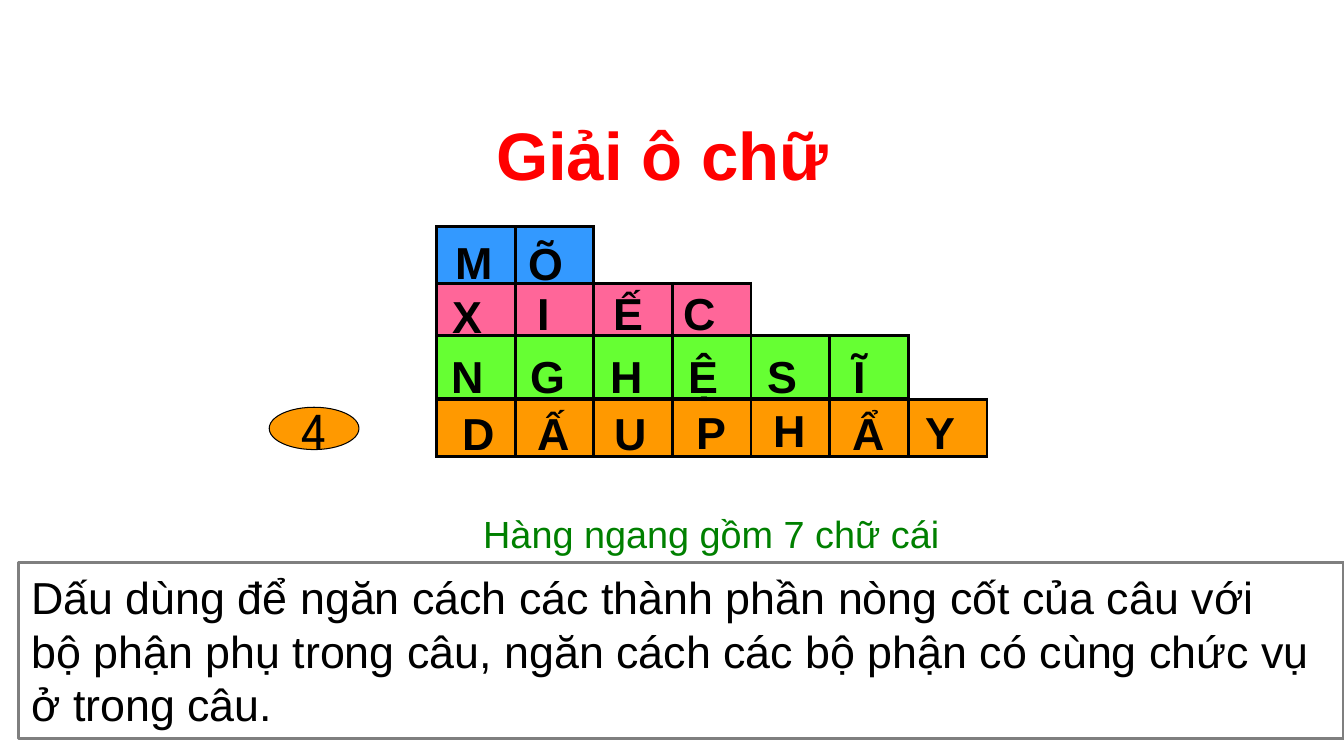
from dataclasses import dataclass

from lxml import etree
from pptx import Presentation
from pptx.dml.color import RGBColor
from pptx.enum.shapes import MSO_SHAPE
from pptx.enum.text import MSO_ANCHOR, PP_ALIGN
from pptx.oxml.ns import qn
from pptx.util import Inches, Pt

LEFT, CENTER = PP_ALIGN.LEFT, PP_ALIGN.CENTER
TOP, MIDDLE = MSO_ANCHOR.TOP, MSO_ANCHOR.MIDDLE
OVAL, RECTANGLE = MSO_SHAPE.OVAL, MSO_SHAPE.RECTANGLE


@dataclass(frozen=True)
class Theme:
    font: str = "Arial"
    badge_font: str = "League Spartan"
    black: str = "000000"
    red: str = "FF0000"
    yellow: str = "FFFF00"
    green: str = "008000"
    gray: str = "7F7F7F"
    orange: str = "FF9900"
    title_size: int = 48
    badge_size: int = 37
    body_size: int = 32
    hint_size: int = 27
    border: float = 2.25
    thin: float = 0.75


THEME = Theme()
GRID_LEFT = 4.33
CELL_WIDTH = 0.78
LETTER_WIDTH, LETTER_HEIGHT = 0.65, 0.67

# Each crossword row: top, height, fill, letters as (text, left, top, alignment)
ROWS = [
    (2.25, 0.57, "3399FF", [("M", 4.39, 2.26, LEFT), ("Õ", 5.09, 2.27, CENTER)]),
    (2.81, 0.57, "FF6699", [("X", 4.31, 2.79, CENTER), ("I", 5.07, 2.76, CENTER),
                            ("Ế", 5.91, 2.76, CENTER), ("C", 6.61, 2.76, CENTER)]),
    (3.33, 0.62, "66FF33", [("N", 4.31, 3.39, CENTER), ("G", 5.11, 3.39, CENTER),
                            ("H", 5.89, 3.39, CENTER), ("Ệ", 6.65, 3.39, CENTER),
                            ("S", 7.44, 3.39, CENTER), ("Ĩ", 8.2, 3.39, CENTER)]),
    (3.96, 0.57, THEME.orange, [("D", 4.46, 3.96, LEFT), ("Ấ", 5.2, 3.96, LEFT),
                                ("U", 5.93, 3.96, CENTER), ("P", 6.78, 3.95, LEFT),
                                ("H", 7.54, 3.93, LEFT), ("Ẩ", 8.33, 3.96, LEFT),
                                ("Y", 9, 3.95, CENTER)]),
]


def color(value):
    return RGBColor.from_string(value)


def add_line(parent, tag, value, width):
    """Build a solid line element under parent."""
    line = etree.SubElement(parent, qn(tag), w=str(Pt(width)))
    fill = etree.SubElement(line, qn("a:solidFill"))
    etree.SubElement(fill, qn("a:srgbClr"), val=value)
    return line


def write(shape, lines, size, value, align=LEFT, bold=False, font=THEME.font,
          wrap=True, anchor=TOP):
    """Fill a shape with one paragraph and return its spans."""
    frame = shape.text_frame
    frame.word_wrap = wrap
    frame.vertical_anchor = anchor
    frame.margin_left = frame.margin_right = Inches(0.13)
    frame.margin_top = frame.margin_bottom = Inches(0.07)
    para = frame.paragraphs[0]
    para.alignment = align
    spans = []
    for index, line in enumerate(lines):
        if index:
            para.add_line_break()
        span = para.add_run()
        span.text = line
        span.font.name = font
        span.font.size = Pt(size)
        span.font.bold = bold
        span.font.color.rgb = color(value)
        spans.append(span)
    return spans


def add_text(page, at, text, size, value, **style):
    box = page.shapes.add_textbox(*map(Inches, at))
    return write(box, [text], size, value, **style)[0]


def add_panel(page, kind, at, line, width, fill=None):
    panel = page.shapes.add_shape(kind, *map(Inches, at))
    panel.shadow.inherit = False
    if fill:
        panel.fill.solid()
        panel.fill.fore_color.rgb = color(fill)
    else:
        panel.fill.background()
    panel.line.color.rgb = color(line)
    panel.line.width = Pt(width)
    return panel


def add_title(page, text):
    span = add_text(page, (2.85, 1.05, 7.44, 1.52), text, THEME.title_size,
                    THEME.red, align=CENTER, bold=True, wrap=False)
    properties = span.font._element
    properties.insert(0, add_line(properties, "a:ln", THEME.yellow, THEME.thin))


def add_row_grid(page, top, height, fill, count):
    frame = page.shapes.add_table(1, count, Inches(GRID_LEFT), Inches(top),
                                  Inches(CELL_WIDTH * count), Inches(height))
    grid = frame.table
    grid.first_row = grid.horz_banding = False
    for column in grid.columns:
        column.width = Inches(CELL_WIDTH)
    for cell in grid.iter_cells():
        properties = cell._tc.get_or_add_tcPr()
        for side in ("a:lnL", "a:lnR", "a:lnT", "a:lnB"):
            add_line(properties, side, THEME.black, THEME.border)
        cell.fill.solid()
        cell.fill.fore_color.rgb = color(fill)


def add_letter(page, text, left, top, align):
    add_text(page, (left, top, LETTER_WIDTH, LETTER_HEIGHT), text,
             THEME.body_size, THEME.black, align=align, bold=True)


def main():
    deck = Presentation()
    deck.slide_width, deck.slide_height = Inches(13.33), Inches(7.5)
    page = deck.slides.add_slide(deck.slide_layouts[6])

    # Title, hint and clue
    add_title(page, "Giải ô chữ")
    add_text(page, (4.11, 5, 5.89, 0.58), "Hàng ngang gồm 7 chữ cái",
             THEME.hint_size, THEME.green, align=CENTER)
    clue = add_panel(page, RECTANGLE, (0.18, 5.58, 13.15, 1.75),
                     THEME.gray, THEME.border)
    write(clue, ["Dấu dùng để ngăn cách các thành phần nòng cốt của câu với",
                 "bộ phận phụ trong câu, ngăn cách các bộ phận có cùng chức vụ "
                 "ở trong câu."], THEME.body_size, THEME.black)

    # Crossword grid
    for top, height, fill, letters in ROWS:
        add_row_grid(page, top, height, fill, len(letters))

    # Number of the open row
    badge = add_panel(page, OVAL, (2.67, 4.04, 0.89, 0.42), THEME.black,
                      THEME.thin, THEME.orange)
    write(badge, ["4"], THEME.badge_size, THEME.black, align=CENTER,
          font=THEME.badge_font, wrap=False, anchor=MIDDLE)

    # Letters over the grid
    for *_, letters in ROWS:
        for letter in letters:
            add_letter(page, *letter)

    deck.save("out.pptx")


if __name__ == "__main__":
    main()
